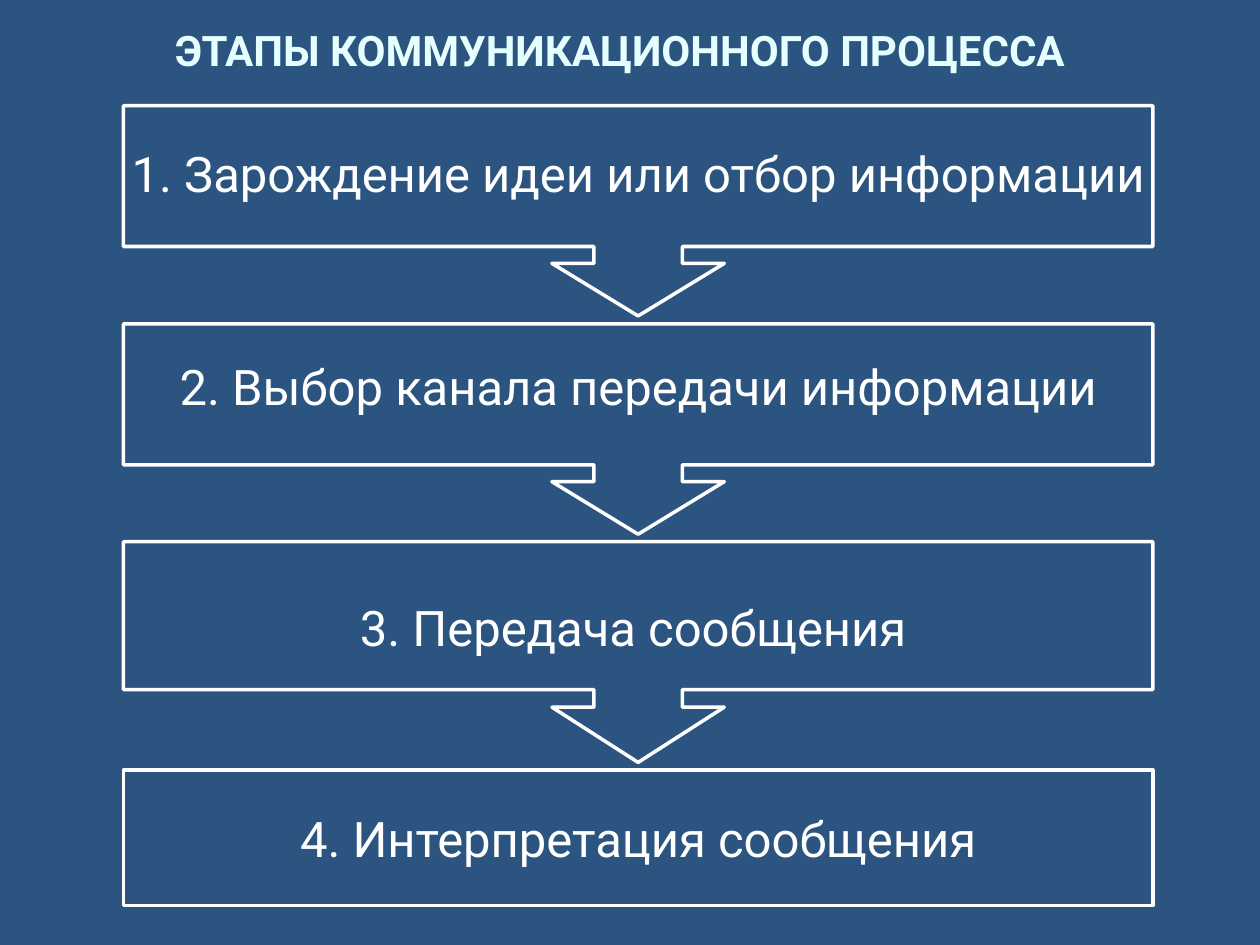
from dataclasses import dataclass

import pptx
import pptx.dml.color
import pptx.enum.shapes
import pptx.enum.text
import pptx.util

Cm = pptx.util.Cm
COLORS = {"background": "2B5481", "outline": "FFFFFF", "body": "FFFFFF", "title": "E5FFFF"}
FONT = "Roboto"
STAGE_LEFT, STAGE_WIDTH = 2.49, 20.75
INSET_X, INSET_Y = 0.25, 0.13


@dataclass
class Stage:
    caption: str
    top: float
    height: float
    shift_x: float = 0
    shift_y: float = 0
    arrow: tuple[float, ...] = ()


STAGES = [
    Stage("1. Зарождение идеи или отбор информации", 2.13, 4.24, 0, -0.06, (0.42, 0.41, 0.25, 0.67)),
    Stage("2. Выбор канала передачи информации", 6.53, 4.24, 0, -0.16, (0.42, 0.41, 0.25, 0.67)),
    Stage("3. Передача сообщения", 10.92, 4.45, -0.1, 0.23, (0.4, 0.39, 0.25, 0.67)),
    Stage("4. Интерпретация сообщения", 15.52, 2.74),
]


def rgb(role: str) -> pptx.dml.color.RGBColor:
    return pptx.dml.color.RGBColor.from_string(COLORS[role])


def write_line(frame: pptx.text.text.TextFrame, text: str, role: str, size: int, bold: bool,
               wrap: bool, shift_x: float, shift_y: float) -> None:
    frame.word_wrap = wrap
    frame.vertical_anchor = pptx.enum.text.MSO_ANCHOR.MIDDLE
    frame.margin_left = Cm(INSET_X + max(0, 2 * shift_x))
    frame.margin_right = Cm(INSET_X + max(0, -2 * shift_x))
    frame.margin_top = Cm(INSET_Y + max(0, 2 * shift_y))
    frame.margin_bottom = Cm(INSET_Y + max(0, -2 * shift_y))
    line = frame.paragraphs[0]
    line.alignment = pptx.enum.text.PP_ALIGN.CENTER
    run = line.add_run()
    run.text = text
    run.font.name = FONT
    run.font.size = pptx.util.Pt(size)
    run.font.bold = bold
    run.font.color.rgb = rgb(role)


def draw_stage(slide: pptx.slide.Slide, stage: Stage) -> None:
    presets = pptx.enum.shapes.MSO_SHAPE
    outline = presets.DOWN_ARROW_CALLOUT if stage.arrow else presets.RECTANGLE
    box = slide.shapes.add_shape(
        outline, Cm(STAGE_LEFT), Cm(stage.top), Cm(STAGE_WIDTH), Cm(stage.height))
    for index, value in enumerate(stage.arrow):
        box.adjustments[index] = value
    box.shadow.inherit = False
    box.fill.background()
    box.line.color.rgb = rgb("outline")
    box.line.width = pptx.util.Pt(2)
    write_line(box.text_frame, stage.caption, "body", 28, False, False, stage.shift_x, stage.shift_y)


def main() -> None:
    deck = pptx.Presentation()
    deck.slide_width, deck.slide_height = Cm(25.4), Cm(19.05)
    slide = deck.slides.add_slide(deck.slide_layouts[6])
    slide.background.fill.solid()
    slide.background.fill.fore_color.rgb = rgb("background")
    for stage in reversed(STAGES):
        draw_stage(slide, stage)
    title = slide.shapes.add_textbox(Cm(1.27), Cm(0.15), Cm(22.86), Cm(1.27))
    write_line(title.text_frame, "ЭТАПЫ КОММУНИКАЦИОННОГО ПРОЦЕССА", "title", 24, True, True, -0.2, 0.21)
    deck.save("out.pptx")


if __name__ == "__main__":
    main()
